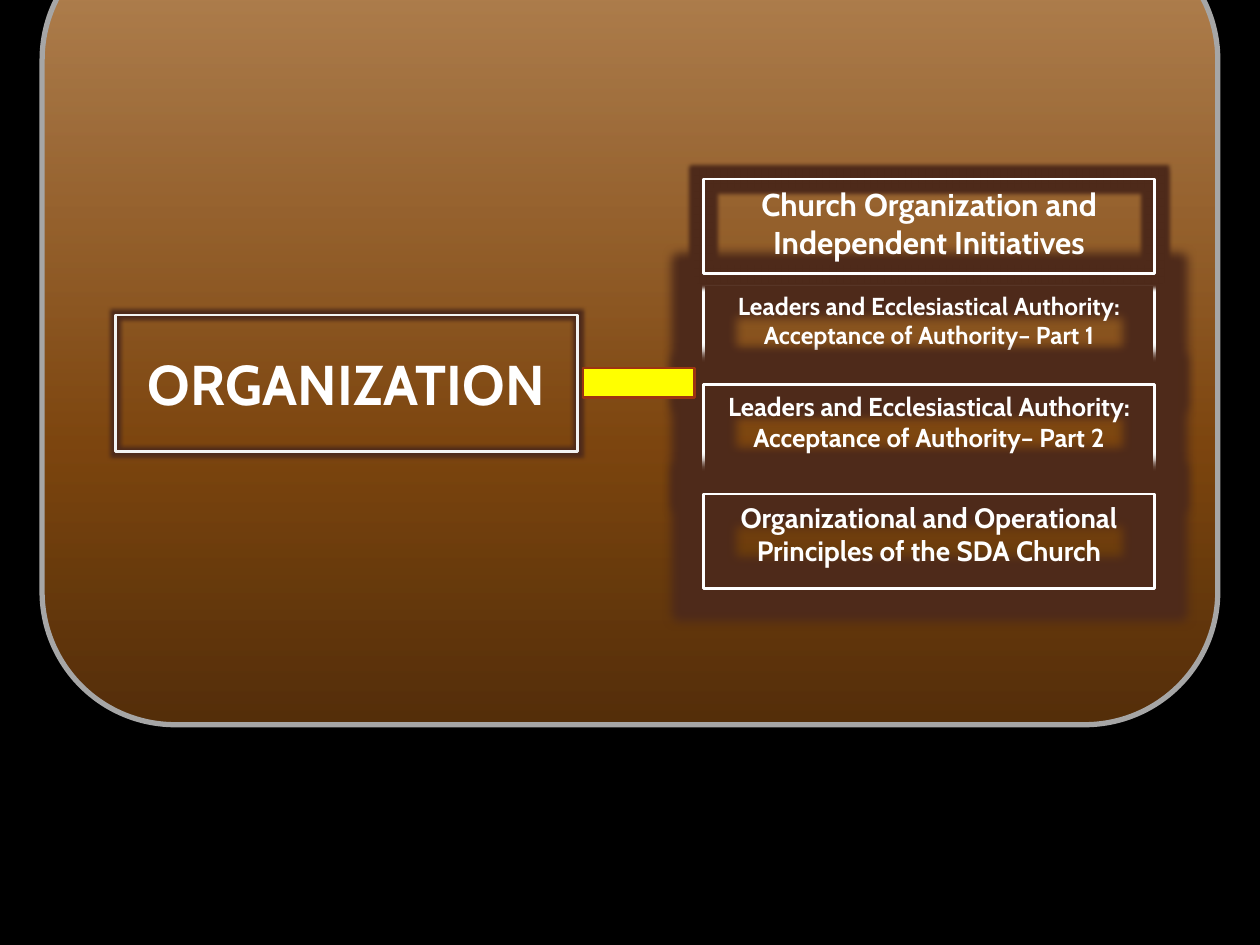
from lxml.etree import SubElement
from pptx import Presentation
from pptx.dml.color import RGBColor
from pptx.enum.shapes import MSO_SHAPE as Shape
from pptx.enum.text import MSO_ANCHOR as Anchor, MSO_AUTO_SIZE as AutoSize, PP_ALIGN as Align
from pptx.oxml.ns import qn
from pptx.util import Cm, Pt

FONT = "Cabin"
WHITE = "FFFFFF"
GLOW = "4E2A1A"
TOPICS = [
    (5.74, "Leaders and Ecclesiastical Authority: Acceptance of Authority– Part 1", 14, 12),
    (3.61, "Church Organization and Independent Initiatives", 18, 5),
    (7.75, "Leaders and Ecclesiastical Authority: Acceptance of Authority– Part 2", 14.8, 12),
    (9.96, "Organizational and Operational Principles of the SDA Church", 16, 12),
]


def color(value):
    """Turn a hex string into a colour."""
    return RGBColor.from_string(value)


def place(shape, left, top, width, height):
    """Move and size a shape, in centimetres."""
    shape.left, shape.top = Cm(left), Cm(top)
    shape.width, shape.height = Cm(width), Cm(height)


def outline(shape, line, weight):
    """Give a shape a plain outline and no shadow."""
    shape.shadow.inherit = False
    shape.line.color.rgb = color(line)
    shape.line.width = Pt(weight)


def add_glow(shape, radius):
    """Surround the outline of a shape with a dark glow."""
    effects = shape.element.spPr.find(qn("a:effectLst"))
    glow = SubElement(effects, qn("a:glow"), rad=str(Pt(radius)))
    SubElement(glow, qn("a:srgbClr"), val=GLOW)


def write(shape, text, size, anchor=Anchor.TOP):
    """Write one centred bold paragraph in a shape."""
    frame = shape.text_frame
    frame.word_wrap = True
    frame.auto_size = AutoSize.NONE
    frame.vertical_anchor = anchor
    para = frame.paragraphs[0]
    para.alignment = Align.CENTER
    span = para.add_run()
    span.text = text
    font = span.font
    font.name, font.size, font.bold = FONT, Pt(size), True
    font.color.rgb = color(WHITE)


def framed_text(shape, box, text, size, line=WHITE, radius=5, anchor=Anchor.TOP):
    """Make a shape into an unfilled, glowing frame with text."""
    place(shape, *box)
    shape.fill.background()
    outline(shape, line, 1.5)
    add_glow(shape, radius)
    write(shape, text, size, anchor)


def add_panel(page, box):
    """Add the rounded, translucent brown panel behind the title."""
    panel = page.shapes.add_shape(Shape.ROUNDED_RECTANGLE, 0, 0, 0, 0)
    place(panel, *box)
    panel.fill.gradient()
    panel.fill.gradient_angle = 270
    stops = panel.element.spPr.find(qn("a:gradFill")).find(qn("a:gsLst"))
    stops.clear()
    for position, value in [(0, "EEB071"), (65, "A55C14"), (100, "6E3D0D")]:
        stop = SubElement(stops, qn("a:gs"), pos=str(position * 1000))
        tint = SubElement(stop, qn("a:srgbClr"), val=value)
        SubElement(tint, qn("a:alpha"), val="75000")
    outline(panel, "A6A6A6", 3)
    page.shapes.title.element.addprevious(panel.element)


def add_topics(page, left, width, height):
    """Add the column of topic boxes."""
    for top, text, size, radius in TOPICS:
        topic = page.shapes.add_shape(Shape.RECTANGLE, 0, 0, 0, 0)
        framed_text(topic, (left, top, width, height), text, size, radius=radius)


def add_link(page, box):
    """Add the yellow bar that joins the title to its topics."""
    bar = page.shapes.add_shape(Shape.MATH_MINUS, 0, 0, 0, 0)
    place(bar, *box)
    bar.fill.solid()
    bar.fill.fore_color.rgb = color("FFFF00")
    outline(bar, "9C3511", 1.5)


def main():
    """Build the slide and save it."""
    deck = Presentation()
    deck.slide_width, deck.slide_height = Cm(25.4), Cm(19.05)
    page = deck.slides.add_slide(deck.slide_layouts[5])
    page.background.fill.solid()
    page.background.fill.fore_color.rgb = color("000000")
    add_panel(page, (0.85, -1.48, 23.7, 16.09))
    framed_text(page.shapes.title, (2.33, 6.35, 9.31, 2.75), "ORGANIZATION", 32,
                line="F2F2F2", anchor=Anchor.MIDDLE)
    add_topics(page, 14.18, 9.1, 1.91)
    add_link(page, (11.35, 6.45, 3.05, 2.54))
    deck.save("out.pptx")


if __name__ == "__main__":
    main()
